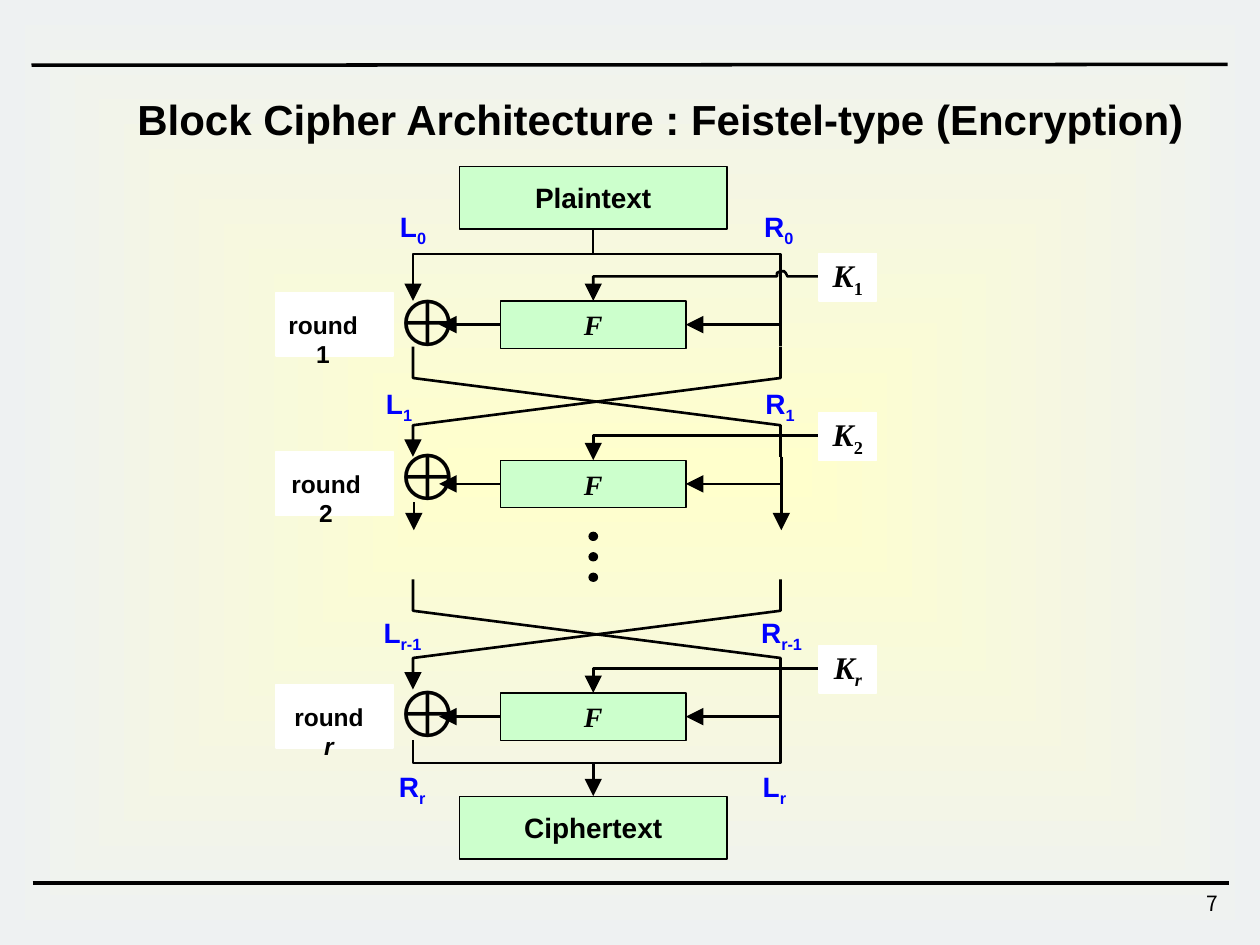
from lxml import etree
from pptx import Presentation
from pptx.dml.color import RGBColor
from pptx.enum import shapes as sh, text as tx
from pptx.oxml.ns import qn
from pptx.util import Pt

HUE = {"ink": "000000", "blue": "0000FF", "green": "CCFFCC",
       "white": "FFFFFF", "glow": "FFFFCC", "edge": "EEF1F2"}
SANS, SERIF = "Arial", "Times New Roman"

# Content: a run is (text, flags), i = italic, s = subscript
TITLE = "Block Cipher Architecture : Feistel-type (Encryption)"
ROUNDS = [  # top of F, top of xor sign, centre of caption, index, flags
    (172, 161.3, 184.6, "1", ""),
    (263, 249.1, 186.3, "2", ""),
    (396, 384.5, 188, "r", "i"),
]
LABELS = [  # letter, index, centre, top
    ("L", "0", 236, 120), ("R", "0", 445, 119.5),
    ("L", "1", 228, 221), ("R", "1", 445.7, 221),
    ("L", "r-1", 230, 352), ("R", "r-1", 446.6, 352),
    ("R", "r", 235.5, 440), ("L", "r", 442.5, 440),
]
ENDS = [("Plaintext", 95), ("Ciphertext", 455)]
RULES = [(18, 37.3, 701.5, 36.8), (18.7, 504.7, 702, 504.7)]

# Columns of the diagram
LEFT, MID, RIGHT, KEY = 236.5, 339, 446.5, 468
F_W, F_H, END_W, END_H = 106, 27, 153, 36

prs = Presentation()
prs.slide_width, prs.slide_height = Pt(720), Pt(540)
slide = prs.slides.add_slide(prs.slide_layouts[5])
pool = slide.shapes


def rgb(name):
    return RGBColor.from_string(HUE[name])


def write(shape, runs, size=16, font=SANS, color="ink", bold=True,
          align="CENTER", anchor="MIDDLE", inset=0, wrap=False):
    frame = shape.text_frame
    frame.word_wrap = wrap
    frame.vertical_anchor = getattr(tx.MSO_ANCHOR, anchor)
    frame.margin_left = frame.margin_right = Pt(inset)
    frame.margin_top = frame.margin_bottom = Pt(inset / 2)
    para = frame.paragraphs[0]
    para.alignment = getattr(tx.PP_ALIGN, align)
    for word, flags in runs:
        run = para.add_run()
        run.text = word
        run.font.size, run.font.name = Pt(size), font
        run.font.bold, run.font.italic = bold, "i" in flags
        run.font.color.rgb = rgb(color)
        if "s" in flags:
            run._r.get_or_add_rPr().set("baseline", "-25000")


def label(x, y, w, h, runs, **form):
    write(pool.add_textbox(Pt(x), Pt(y), Pt(w), Pt(h)), runs, **form)


def block(x, y, w, h, fill, line="ink", kind="RECTANGLE"):
    shape = pool.add_shape(getattr(sh.MSO_SHAPE, kind), Pt(x), Pt(y), Pt(w), Pt(h))
    shape.shadow.inherit = False
    shape.fill.solid()
    shape.fill.fore_color.rgb = rgb(fill)
    shape.line.color.rgb = rgb(line)
    shape.line.width = Pt(0.75)
    return shape


def ink(shape, width, arrow):
    shape.line.color.rgb = rgb("ink")
    shape.line.width = Pt(width)
    if arrow:
        etree.SubElement(shape.line._get_or_add_ln(), qn("a:tailEnd"),
                         type="triangle", w="lg", len="lg")


def link(x1, y1, x2, y2, width=1.5, arrow=True, start=None, end=None):
    line = pool.add_connector(sh.MSO_CONNECTOR.STRAIGHT, Pt(x1), Pt(y1), Pt(x2), Pt(y2))
    if start:
        line.begin_connect(*start)
    if end:
        line.end_connect(*end)
    ink(line, width, arrow)
    etree.SubElement(line._element.spPr, qn("a:effectLst"))


def wire(points, width=1.5, arrow=True):
    pen = pool.build_freeform(*points[0], scale=12700)
    pen.add_line_segments(points[1:], close=False)
    shape = pen.convert_to_shape()
    shape.shadow.inherit = False
    shape.fill.background()
    ink(shape, width, arrow)


# Background glow and rules
fill = slide.background.fill
fill.gradient()
for stop, name, at in zip(fill.gradient_stops, ("glow", "edge"), (0, 1)):
    stop.color.rgb, stop.position = rgb(name), at
grad = slide._element.find(".//" + qn("a:gradFill"))
for old in grad.findall(qn("a:lin")):
    grad.remove(old)
focus = etree.SubElement(grad, qn("a:path"), path="shape")
etree.SubElement(focus, qn("a:fillToRect"),
                 {side: "50000" for side in "ltrb"})
for ends in RULES:
    link(*ends, width=2, arrow=False)

# Title and page number
head = pool.title
head.left, head.top, head.width, head.height = Pt(71.3), Pt(49.7), Pt(631.4), Pt(36)
write(head, [(TITLE, "")], size=24, align="LEFT", anchor="TOP", inset=7.2, wrap=True)
label(553, 505.4, 150, 24, [("7", "")], size=12, font="Noto Sans CJK KR",
      bold=False, align="RIGHT", anchor="TOP", inset=7.2, wrap=True)

# Plaintext and ciphertext
caps = []
for word, top in ENDS:
    caps.append(block(MID - END_W / 2, top, END_W, END_H, "green"))
    write(caps[-1], [(word, "")])

# Split into halves, and join at the end
fork, base = 144.7, 436.5
stem = [(MID, ENDS[0][1] + END_H), (MID, fork)]
wire(stem + [(LEFT, fork), (LEFT, ROUNDS[0][0])], width=1.25)
wire(stem + [(RIGHT, fork), (RIGHT, 198)], width=1.25, arrow=False)
wire([(LEFT, 423), (LEFT, base), (RIGHT, base), (RIGHT, 394)], arrow=False)
link(MID, base, MID, ENDS[1][1], end=(caps[1], 0))

# Rounds
for num, (top, sign, mid, index, flags) in enumerate(ROUNDS):
    if num:  # halves swap before every later round
        high, bend, low = top - 65, top - 47, top - 19.6
        wire([(LEFT, high), (LEFT, bend), (RIGHT, low), (RIGHT, top - 2)], arrow=False)
        wire([(RIGHT, high), (RIGHT, bend), (LEFT, low), (LEFT, top - 2)])

    block(157.7, top - 5, 67, 36.5, "white", "white")
    label(mid - 23, top + 5, 46, 34, [("round ", ""), (index, flags)],
          size=14, anchor="TOP", wrap=True)
    label(226, sign, 28, 44.6, [("⊕", "")], size=37, anchor="TOP")

    box = block(MID - F_W / 2, top, F_W, F_H, "green")
    write(box, [("F", "i")], font=SERIF)
    level = top + F_H / 2
    link(MID - F_W / 2, level, 251, level, start=(box, 1))
    link(RIGHT, level, MID + F_W / 2, level, end=(box, 3))

    feed = top - 14
    hop = [] if num else [(RIGHT + dx, feed - dy) for dx, dy in
                          ((3, 0), (2.5, 1.5), (1, 2.7), (-1, 2.7), (-2.5, 1.5), (-3, 0))]
    wire([(KEY, feed), *hop, (MID, feed), (MID, top)])
    key = block(KEY, top - 27.3, 33, 27.3, "white", "white")
    write(key, [("K", "i"), (index, flags + "s")], size=18, font=SERIF)

# Break after the second round
link(RIGHT, 261, RIGHT, 303)
link(LEFT, 287, LEFT, 303)
for num in range(3):
    block(MID - 2.4, 304.2 + 11.7 * num, 4.8, 4.6, "ink", kind="OVAL")

# Names of the halves
for letter, index, mid, top in LABELS:
    label(mid - 12, top, 24, 19.4, [(letter, ""), (index, "s")], color="blue", anchor="TOP")

prs.save("out.pptx")
